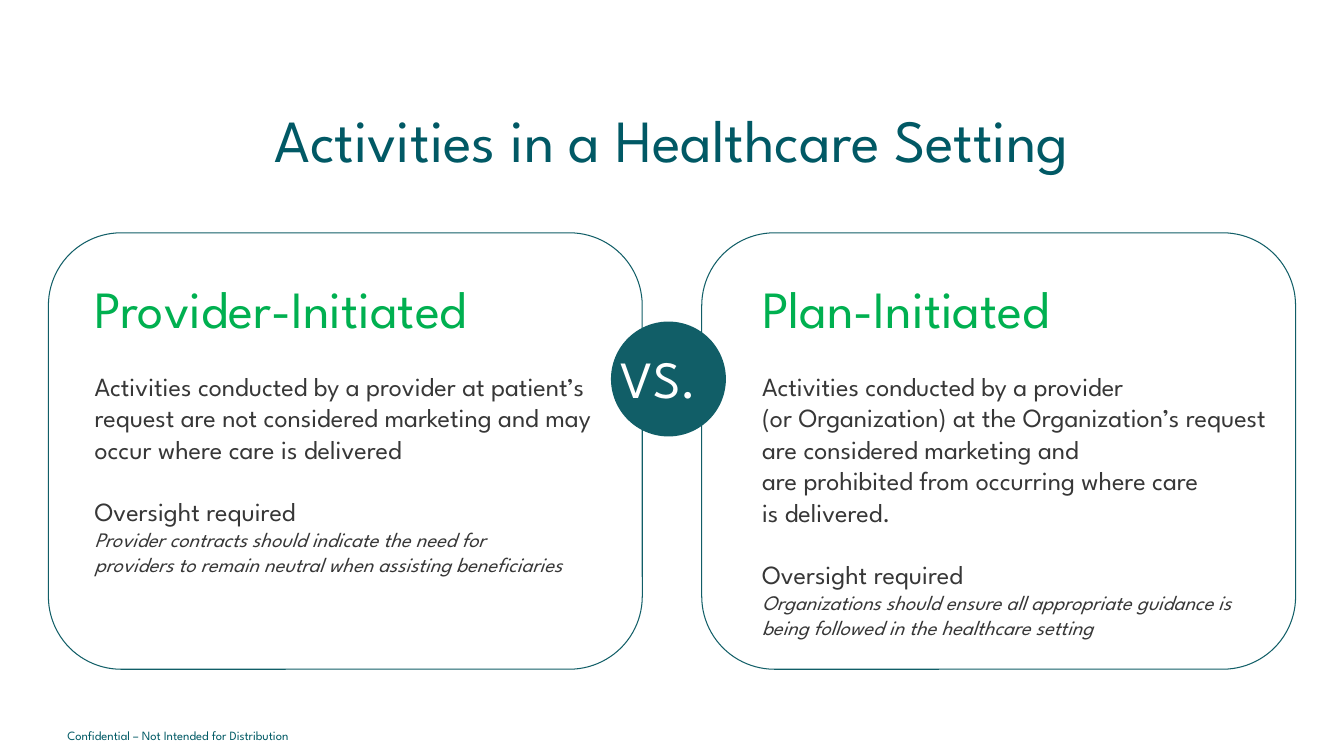
from pptx import Presentation
from pptx.dml.color import RGBColor
from pptx.enum.shapes import MSO_SHAPE
from pptx.enum.text import PP_ALIGN
from pptx.util import Inches, Pt

FONT = "League Spartan"
COLORS = {
    "title": "015965",
    "footer": "005A65",
    "teal": "115E67",
    "heading": "00B050",
    "body": "373737",
    "white": "FFFFFF",
}
BLANK_LINE = 22.4
CARD_TOP, CARD_WIDTH, CARD_HEIGHT = 2.31, 5.89, 4.33

PROVIDER = [
    "Provider-Initiated",
    ["Activities conducted by a provider at patient’s request are not considered "
     "marketing and may occur where care is delivered"],
    ["Provider contracts should indicate the need for",
     "providers to remain neutral when assisting beneficiaries"],
]
PLAN = [
    "Plan-Initiated",
    ["Activities conducted by a provider",
     "(or Organization) at the Organization’s request are considered marketing and",
     "are prohibited from occurring where care",
     "is delivered."],
    ["Organizations should ensure all appropriate guidance is being followed "
     "in the healthcare setting"],
]


def color(name):
    return RGBColor.from_string(COLORS[name])


def add_text_frame(slide, left, top, width, height):
    box = slide.shapes.add_textbox(Inches(left), Inches(top), Inches(width), Inches(height))
    box.text_frame.word_wrap = True
    return box.text_frame


def write(paragraph, lines, size, color_name, italic=False, space_after=0):
    paragraph.space_after = Pt(space_after)
    for index, line in enumerate(lines):
        if index:
            paragraph.add_line_break()
        run = paragraph.add_run()
        run.text = line
        run.font.name = FONT
        run.font.size = Pt(size)
        run.font.italic = italic
        run.font.color.rgb = color(color_name)


def add_label(slide, text, size, color_name, left, top, width, height, alignment=PP_ALIGN.LEFT):
    paragraph = add_text_frame(slide, left, top, width, height).paragraphs[0]
    paragraph.alignment = alignment
    write(paragraph, [text], size, color_name)


def add_card(slide, left, text_offset, text_width, content):
    card = slide.shapes.add_shape(
        MSO_SHAPE.ROUNDED_RECTANGLE,
        Inches(left), Inches(CARD_TOP), Inches(CARD_WIDTH), Inches(CARD_HEIGHT))
    card.shadow.inherit = False
    card.fill.background()
    card.line.color.rgb = color("teal")
    card.line.width = Pt(0.75)

    heading, description, guidance = content
    frame = add_text_frame(slide, left + text_offset, CARD_TOP + 0.38, text_width, 3.78)
    write(frame.paragraphs[0], [heading], 37.3, "heading", space_after=BLANK_LINE)
    write(frame.add_paragraph(), description, 18.7, "body", space_after=BLANK_LINE)
    write(frame.add_paragraph(), ["Oversight required"], 18.7, "body")
    write(frame.add_paragraph(), guidance, 14.7, "body", italic=True)


def add_versus_badge(slide, left, top, diameter):
    badge = slide.shapes.add_shape(
        MSO_SHAPE.OVAL, Inches(left), Inches(top), Inches(diameter), Inches(diameter))
    badge.shadow.inherit = False
    badge.fill.solid()
    badge.fill.fore_color.rgb = color("teal")
    badge.line.fill.background()
    add_label(slide, "VS.", 37.3, "white", left, top + 0.2, 1.08, 0.82)


def build_comparison_slide(presentation):
    slide = presentation.slides.add_slide(presentation.slide_layouts[6])
    add_label(slide, "Activities in a Healthcare Setting", 42.7, "title",
              0, 0.97, 13.33, 0.82, PP_ALIGN.CENTER)
    add_label(slide, "Confidential – Not Intended for Distribution", 9, "footer",
              0.57, 7.17, 4.54, 0.25)
    add_card(slide, 0.48, 0.36, 5.56, PROVIDER)
    add_card(slide, 6.96, 0.5, 5.36, PLAN)
    add_versus_badge(slide, 6.06, 3.19, 1.14)


def main():
    presentation = Presentation()
    presentation.slide_width = Inches(13.33)
    presentation.slide_height = Inches(7.5)
    build_comparison_slide(presentation)
    presentation.save("out.pptx")


if __name__ == "__main__":
    main()
